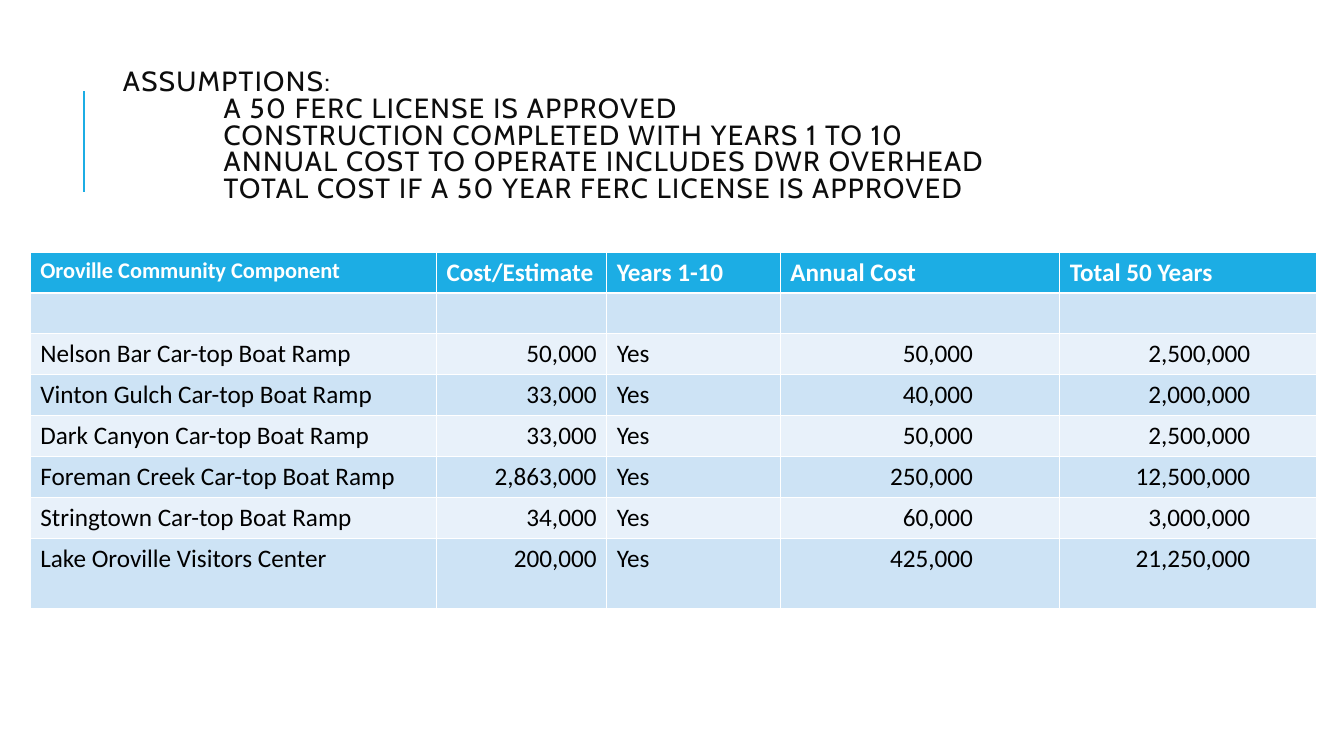
from dataclasses import dataclass

from pptx import Presentation
from pptx.dml.color import RGBColor
from pptx.enum.shapes import MSO_CONNECTOR
from pptx.enum.text import MSO_ANCHOR, MSO_AUTO_SIZE, PP_ALIGN
from pptx.oxml import parse_xml
from pptx.oxml.ns import nsdecls
from pptx.util import Pt


@dataclass(frozen=True)
class Theme:
    accent = RGBColor.from_string("1CADE4")
    title = RGBColor.from_string("0D0D0D")
    white = RGBColor.from_string("FFFFFF")
    text = RGBColor.from_string("000000")
    bands = (RGBColor.from_string("CDE3F5"), RGBColor.from_string("E8F1FA"))
    title_font = "Cabin"
    body_font = "Calibri"
    title_size = 19.8
    label_size = 16
    body_size = 18


THEME = Theme()

TITLE = "ASSUMPTIONS:"
ASSUMPTIONS = [
    "A 50 FERC LICENSE IS APPROVED",
    "CONSTRUCTION COMPLETED WITH YEARS 1 TO 10",
    "ANNUAL COST TO OPERATE INCLUDES DWR OVERHEAD",
    "TOTAL COST IF A 50 YEAR FERC LICENSE IS APPROVED",
]

# Heading, width, alignment, right margin
COLUMNS = [
    ("Oroville Community Component", 290.2, PP_ALIGN.LEFT, 7.2),
    ("Cost/Estimate", 121.6, PP_ALIGN.RIGHT, 7.2),
    ("Years 1-10", 124, PP_ALIGN.LEFT, 7.2),
    ("Annual Cost", 199.6, PP_ALIGN.RIGHT, 62),
    ("Total 50 Years", 183.6, PP_ALIGN.RIGHT, 47.5),
]
COMPONENTS = [
    ("",) * 5,
    ("Nelson Bar Car-top Boat Ramp", "50,000", "Yes", "50,000", "2,500,000"),
    ("Vinton Gulch Car-top Boat Ramp", "33,000", "Yes", "40,000", "2,000,000"),
    ("Dark Canyon Car-top Boat Ramp", "33,000", "Yes", "50,000", "2,500,000"),
    ("Foreman Creek Car-top Boat Ramp", "2,863,000", "Yes", "250,000", "12,500,000"),
    ("Stringtown Car-top Boat Ramp", "34,000", "Yes", "60,000", "3,000,000"),
    ("Lake Oroville Visitors Center", "200,000", "Yes", "425,000", "21,250,000"),
]
ROW_HEIGHT = 29.25
LAST_ROW_HEIGHT = 50


def style_run(r, font, size, color, bold=False):
    r.font.name = font
    r.font.size = Pt(size)
    r.font.color.rgb = color
    r.font.bold = bold


def add_accent_line(s, x, y, height):
    line = s.shapes.add_connector(
        MSO_CONNECTOR.STRAIGHT, Pt(x), Pt(y + height), Pt(x), Pt(y))
    line.line.color.rgb = THEME.accent
    line.line.width = Pt(1.5)
    line._element.spPr.append(parse_xml(f"<a:effectLst {nsdecls('a')}/>"))


def add_assumptions(s, x, y, width, height):
    """Fill the title with a heading and indented lines, set high in its box."""
    sp = s.shapes.title
    sp.left, sp.top, sp.width, sp.height = Pt(x), Pt(y), Pt(width), Pt(height)
    tf = sp.text_frame
    tf.word_wrap = True
    tf.auto_size = MSO_AUTO_SIZE.NONE
    tf.vertical_anchor = MSO_ANCHOR.MIDDLE
    tf.margin_top, tf.margin_bottom = Pt(0), Pt(46)
    tf.text = "\n".join([TITLE, *ASSUMPTIONS])
    for i, p in enumerate(tf.paragraphs):
        p.alignment = PP_ALIGN.LEFT
        p.line_spacing = 0.8
        p.space_before = p.space_after = Pt(0)
        p._p.get_or_add_pPr().set("marL", str(Pt(72 if i else 0)))
        r = p.runs[0]
        style_run(r, THEME.title_font, THEME.title_size, THEME.title)
        r.font._element.set("spc", "100")


def fill_cell(cell, text, fill, align, margin_right, size, color, bold):
    cell.fill.solid()
    cell.fill.fore_color.rgb = fill
    cell.margin_right = Pt(margin_right)
    cell.text = text
    p = cell.text_frame.paragraphs[0]
    p.alignment = align
    for r in p.runs:
        style_run(r, THEME.body_font, size, color, bold)


def add_cost_table(s, x, y):
    width = sum(column[1] for column in COLUMNS)
    height = ROW_HEIGHT * len(COMPONENTS) + LAST_ROW_HEIGHT
    table = s.shapes.add_table(
        len(COMPONENTS) + 1, len(COLUMNS),
        Pt(x), Pt(y), Pt(width), Pt(height)).table
    for row in table.rows:
        row.height = Pt(ROW_HEIGHT)
    table.rows[len(COMPONENTS)].height = Pt(LAST_ROW_HEIGHT)

    for j, (heading, column_width, align, margin_right) in enumerate(COLUMNS):
        table.columns[j].width = Pt(column_width)
        size = THEME.body_size if j else THEME.label_size
        fill_cell(table.cell(0, j), heading, THEME.accent, PP_ALIGN.LEFT, 7.2,
                  size, THEME.white, True)
        for i, component in enumerate(COMPONENTS):
            fill_cell(table.cell(i + 1, j), component[j], THEME.bands[i % 2],
                      align, margin_right, THEME.body_size, THEME.text, False)


def build_cost_slide(prs):
    s = prs.slides.add_slide(prs.slide_layouts[5])
    add_accent_line(s, 60, 65, 72)
    add_assumptions(s, 80.6, 62, 844, 118)
    add_cost_table(s, 21.6, 180)


def main():
    prs = Presentation()
    prs.slide_width, prs.slide_height = Pt(960), Pt(540)
    build_cost_slide(prs)
    prs.save("out.pptx")


if __name__ == "__main__":
    main()
